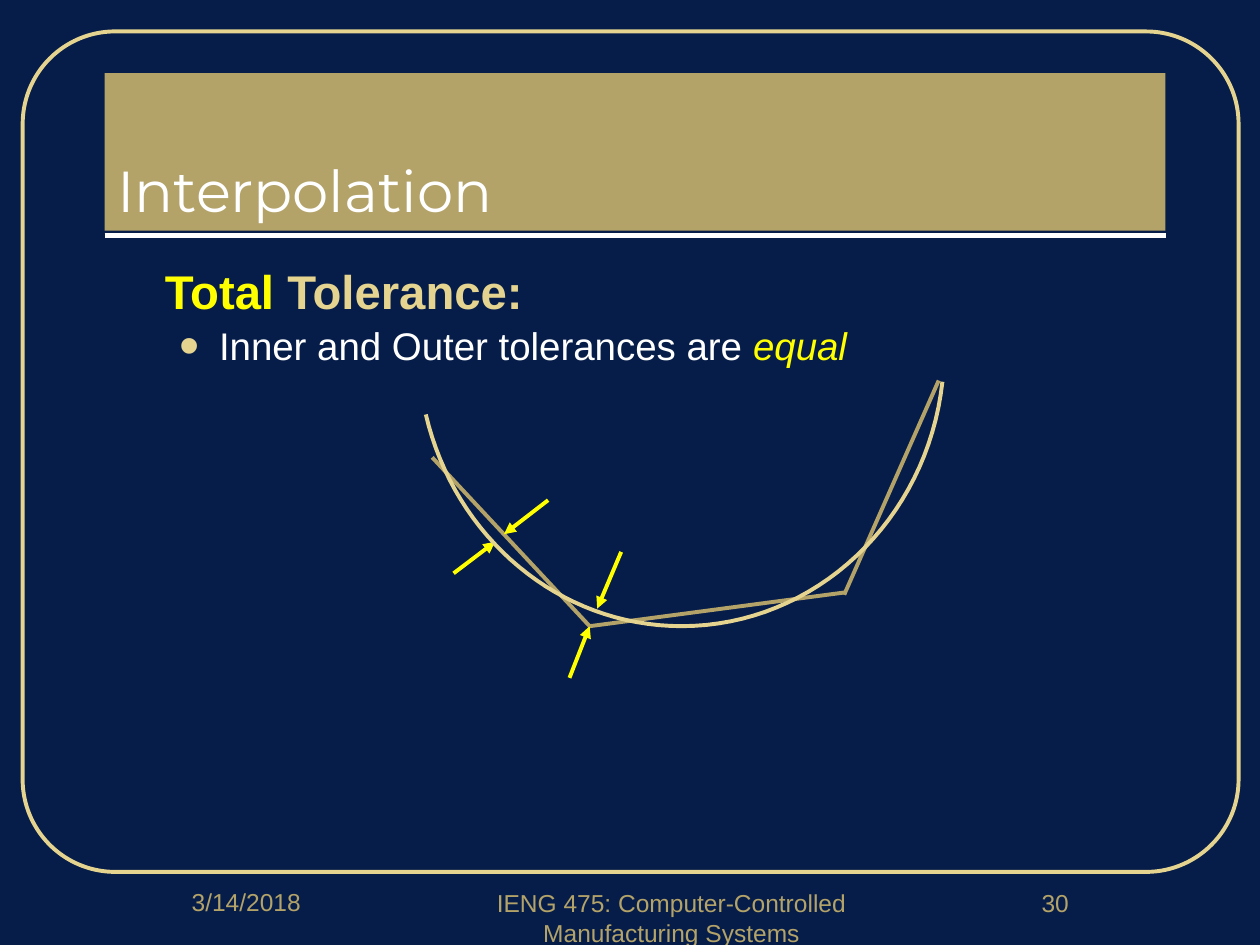
"""Build the Interpolation slide on a grid of 100 columns by 75 rows."""
from dataclasses import dataclass

from lxml import etree
from pptx import Presentation
from pptx import util as u
from pptx.dml.color import RGBColor
from pptx.enum import shapes, text
from pptx.oxml.ns import qn

COLS, ROWS = 100, 75
NAVY, GOLD, SAND, WHITE, YELLOW = "071D49", "B3A369", "E4D490", "FFFFFF", "FFFF00"
LEFT, WIDTH = 8.3, 84.2

prs = Presentation()
prs.slide_width, prs.slide_height = u.Inches(10), u.Inches(7.5)


@dataclass
class Box:
    col: float
    row: float
    cols: float
    rows: float


@dataclass
class Line:
    start: tuple[float, float]
    end: tuple[float, float]
    color: str
    width: float = 2.25
    arrow: bool = False


@dataclass
class Run:
    text: str
    size: float
    color: str
    font: str = "Arial"
    bold: bool = False
    italic: bool = False


def x(col: float) -> int:
    return round(prs.slide_width * col / COLS)


def y(row: float) -> int:
    return round(prs.slide_height * row / ROWS)


def frame(box: Box) -> tuple[int, int, int, int]:
    return x(box.col), y(box.row), x(box.cols), y(box.rows)


def rgb(color: str) -> RGBColor:
    return RGBColor.from_string(color)


def style_outline(sp, color: str, width: float = 2.25) -> None:
    sp.shadow.inherit = False
    sp.fill.background()
    sp.line.color.rgb = rgb(color)
    sp.line.width = u.Pt(width)


def draw_line(s, line: Line) -> None:
    c = s.shapes.add_connector(shapes.MSO_CONNECTOR.STRAIGHT,
                               x(line.start[0]), y(line.start[1]),
                               x(line.end[0]), y(line.end[1]))
    c.line.color.rgb = rgb(line.color)
    c.line.width = u.Pt(line.width)
    if line.arrow:
        etree.SubElement(c.line._get_or_add_ln(), qn("a:tailEnd"), type="triangle")
    etree.SubElement(c._element.spPr, qn("a:effectLst"))


def add_runs(p, runs: list[Run]) -> None:
    for run in runs:
        r = p.add_run()
        r.text = run.text
        f = r.font
        f.size, f.name, f.bold, f.italic = u.Pt(run.size), run.font, run.bold, run.italic
        f.color.rgb = rgb(run.color)


def add_text(s, box: Box):
    tf = s.shapes.add_textbox(*frame(box)).text_frame
    tf.word_wrap = True
    return tf


def add_footer(s, box: Box, words: str) -> None:
    p = add_text(s, box).paragraphs[0]
    p.alignment = text.PP_ALIGN.CENTER
    add_runs(p, [Run(words, 14, GOLD)])


def format_body(p, margin: float, indent: float, before: float) -> None:
    p.line_spacing, p.space_before = 0.9, u.Pt(before)
    pPr = p._p.get_or_add_pPr()
    pPr.set("marL", str(u.Inches(margin)))
    pPr.set("indent", str(u.Inches(indent)))


def add_bullet(p, char: str, color: str, percent: int) -> None:
    pPr = p._p.get_or_add_pPr()
    clr = etree.SubElement(pPr, qn("a:buClr"))
    etree.SubElement(clr, qn("a:srgbClr"), val=color)
    etree.SubElement(pPr, qn("a:buSzPct"), val=str(percent * 1000))
    etree.SubElement(pPr, qn("a:buFont"), typeface="Arial")
    etree.SubElement(pPr, qn("a:buChar"), char=char)


def bezier(p0, p1, p2, p3, steps: int = 32) -> list[tuple[float, float]]:
    points = []
    for i in range(1, steps + 1):
        t = i / steps
        weights = ((1 - t) ** 3, 3 * t * (1 - t) ** 2, 3 * t ** 2 * (1 - t), t ** 3)
        points.append(tuple(sum(w * q[axis] for w, q in zip(weights, (p0, p1, p2, p3)))
                            for axis in (0, 1)))
    return points


def draw_curve(s, start, bottom, end) -> None:
    points = (bezier(start, (36.1, 42.7), (44.4, 49.7), bottom)
              + bezier(bottom, (64.7, 49.7), (73.6, 41.3), end))
    fb = s.shapes.build_freeform(x(start[0]), y(start[1]))
    fb.add_line_segments([(x(col), y(row)) for col, row in points], close=False)
    style_outline(fb.convert_to_shape(), SAND)


def main() -> None:
    s = prs.slides.add_slide(prs.slide_layouts[5])
    s.background.fill.solid()
    s.background.fill.fore_color.rgb = rgb(NAVY)

    border = s.shapes.add_shape(shapes.MSO_SHAPE.ROUNDED_RECTANGLE,
                                *frame(Box(1.8, 2.5, 96.5, 66.7)))
    border.adjustments[0] = 0.11
    style_outline(border, SAND)

    title = s.shapes.title
    title.left, title.top, title.width, title.height = frame(Box(LEFT, 5.8, WIDTH, 12.5))
    title.fill.solid()
    title.fill.fore_color.rgb = rgb(GOLD)
    tf = title.text_frame
    tf.vertical_anchor = text.MSO_ANCHOR.BOTTOM
    tf.paragraphs[0].alignment = text.PP_ALIGN.LEFT
    add_runs(tf.paragraphs[0], [Run("Interpolation", 33, WHITE, "Montserrat")])

    for box, words in ((Box(LEFT, 69.9, 22.5, 5), "3/14/2018"),
                       (Box(35.8, 70, 35, 5),
                        "IENG 475: Computer-Controlled Manufacturing Systems"),
                       (Box(75, 70, 17.5, 5), "30")):
        add_footer(s, box, words)

    tf = add_text(s, Box(LEFT, 20.8, WIDTH, 5.4))
    p = tf.paragraphs[0]
    format_body(p, 0.38, 0, 5.4)
    add_runs(p, [Run("Total", 27, YELLOW, bold=True),
                 Run(" Tolerance:", 27, SAND, bold=True)])
    p = tf.add_paragraph()
    p.level = 1
    format_body(p, 0.81, -0.31, 4.4)
    add_bullet(p, "•", SAND, 150)
    add_runs(p, [Run("Inner and Outer tolerances are ", 22, WHITE),
                 Run("equal", 22, YELLOW, italic=True)])

    for line in (Line((LEFT, 18.7), (LEFT + WIDTH, 18.7), WHITE, 3),
                 Line((34.3, 36.3), (46.8, 49.7), GOLD),
                 Line((46.8, 49.7), (67.2, 47), GOLD),
                 Line((67, 47.2), (74.5, 30.2), GOLD),
                 Line((36, 45.5), (39.3, 43), YELLOW, arrow=True),
                 Line((43.5, 39.7), (40, 42.4), YELLOW, arrow=True),
                 Line((49.3, 43.8), (47.4, 48.3), YELLOW, arrow=True),
                 Line((45.2, 53.8), (46.8, 49.7), YELLOW, arrow=True)):
        draw_line(s, line)
    draw_curve(s, (33.8, 32.9), (54.1, 49.7), (74.8, 30.3))

    prs.save("out.pptx")


if __name__ == "__main__":
    main()
